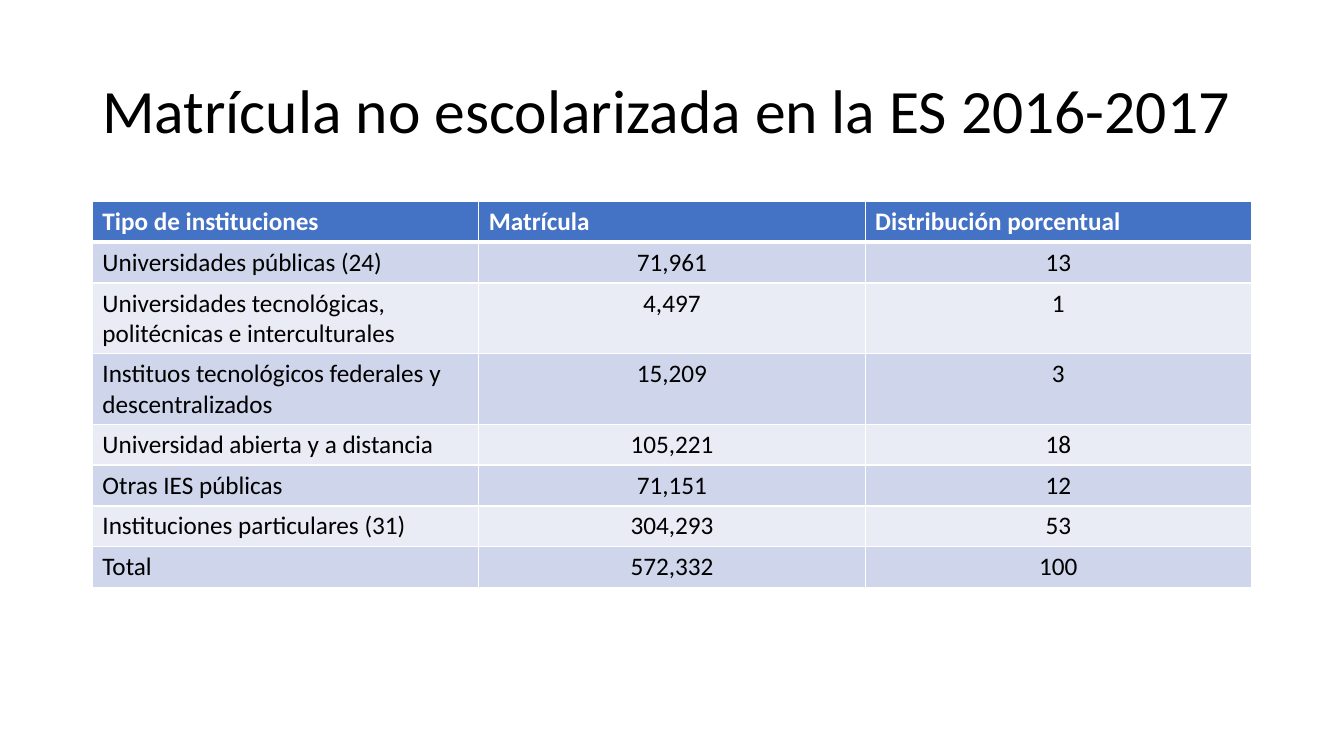
from lxml.etree import SubElement
from pptx import Presentation
from pptx.dml.color import RGBColor
from pptx.enum.text import MSO_ANCHOR, PP_ALIGN
from pptx.oxml.ns import qn
from pptx.util import Pt

HEADER_FILL = "4472C4"
BAND_FILLS = ("CFD5EA", "E9EBF5")
WHITE, BLACK = "FFFFFF", "000000"

ENROLMENT = [
    ("Tipo de instituciones", "Matrícula", "Distribución porcentual"),
    ("Universidades públicas (24)", "71,961", "13"),
    ("Universidades tecnológicas, politécnicas e interculturales", "4,497", "1"),
    ("Instituos tecnológicos federales y descentralizados", "15,209", "3"),
    ("Universidad abierta y a distancia", "105,221", "18"),
    ("Otras IES públicas", "71,151", "12"),
    ("Instituciones particulares (31)", "304,293", "53"),
    ("Total", "572,332", "100"),
]


def colour(value):
    return RGBColor.from_string(value)


class Page:
    font = "Calibri"

    def __init__(self, deck):
        self.slide = deck.slides.add_slide(deck.slide_layouts[6])
        self.slide.background.fill.solid()
        self.slide.background.fill.fore_color.rgb = colour(WHITE)

    def add_span(self, para, text, size, ink, bold=False):
        span = para.add_run()
        span.text = text
        span.font.name = self.font
        span.font.size = Pt(size)
        span.font.bold = bold
        span.font.color.rgb = colour(ink)

    def add_title(self, text, left, top, width, height):
        box = self.slide.shapes.add_textbox(Pt(left), Pt(top), Pt(width), Pt(height))
        frame = box.text_frame
        frame.word_wrap = True
        frame.vertical_anchor = MSO_ANCHOR.MIDDLE
        para = frame.paragraphs[0]
        para.line_spacing = 0.9
        self.add_span(para, text, 44, BLACK)

    def add_borders(self, cell, top, bottom):
        properties = cell._tc.get_or_add_tcPr()
        for side, weight in (("L", 1), ("R", 1), ("T", top), ("B", bottom)):
            line = SubElement(properties, qn(f"a:ln{side}"), w=str(Pt(weight)))
            fill = SubElement(line, qn("a:solidFill"))
            SubElement(fill, qn("a:srgbClr"), val=WHITE)

    def add_table(self, rows, left, top, width, row_height):
        table = self.slide.shapes.add_table(
            len(rows), len(rows[0]), Pt(left), Pt(top),
            Pt(width), Pt(row_height * len(rows))).table
        for row_index, row in enumerate(rows):
            header = row_index == 0
            fill = HEADER_FILL if header else BAND_FILLS[(row_index - 1) % 2]
            for column_index, text in enumerate(row):
                cell = table.cell(row_index, column_index)
                # The rule under the header is heavier than the others
                self.add_borders(cell, top=3 if row_index == 1 else 1,
                                 bottom=3 if header else 1)
                cell.fill.solid()
                cell.fill.fore_color.rgb = colour(fill)
                para = cell.text_frame.paragraphs[0]
                if column_index and not header:
                    para.alignment = PP_ALIGN.CENTER
                self.add_span(para, text, 18, WHITE if header else BLACK, header)


def main():
    deck = Presentation()
    deck.slide_width, deck.slide_height = Pt(960), Pt(540)
    page = Page(deck)

    # Title
    page.add_title("Matrícula no escolarizada en la ES 2016-2017",
                   66, 28.75, 828, 104.4)

    # Enrolment by type of institution
    page.add_table(ENROLMENT, 66, 143.75, 828, 29.2)

    deck.save("out.pptx")


if __name__ == "__main__":
    main()
